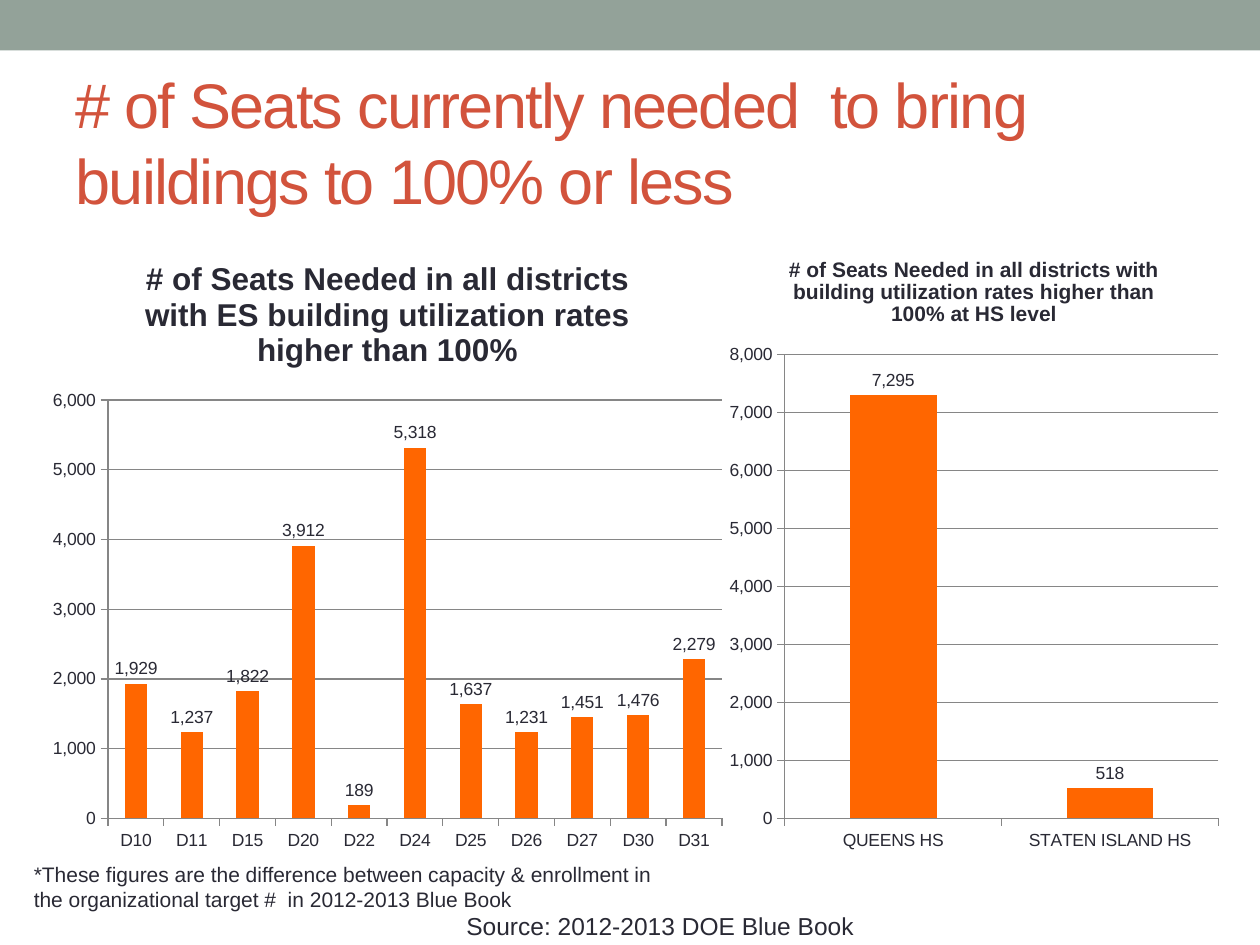
from pptx import Presentation
from pptx.chart.data import CategoryChartData
from pptx.dml.color import RGBColor
from pptx.enum.chart import XL_CHART_TYPE as ChartType, XL_LABEL_POSITION as LabelPos, XL_TICK_MARK as Tick
from pptx.enum.shapes import MSO_SHAPE as Shape
from pptx.enum.text import MSO_ANCHOR as Anchor, MSO_AUTO_SIZE as AutoSize, PP_ALIGN as Align
from pptx.util import Inches, Pt

FONT = "Arial"
INK, RUST, SAGE, ORANGE, GRAY = "292934", "D2533C", "93A299", "FF6600", "868686"
NUMBER = "#,##0"
CHART_TOP, CHART_HEIGHT = 1.85, 5
SEATS_ES = {"D10": 1929, "D11": 1237, "D15": 1822, "D20": 3912, "D22": 189, "D24": 5318,
            "D25": 1637, "D26": 1231, "D27": 1451, "D30": 1476, "D31": 2279}
SEATS_HS = {"QUEENS HS": 7295, "STATEN ISLAND HS": 518}


def color(value):
    """Turn a hex string into a colour."""
    return RGBColor.from_string(value)


def place(box, area):
    """Move a shape to an area given in inches."""
    box.left, box.top, box.width, box.height = map(Inches, area)


def style(font, size, ink=INK, bold=False):
    """Set face, size, colour and weight of a font."""
    font.name, font.size, font.bold = FONT, Pt(size), bold
    font.color.rgb = color(ink)


def write(frame, text, size, ink=INK, bold=False, align=Align.LEFT, anchor=Anchor.TOP,
          fit=AutoSize.SHAPE_TO_FIT_TEXT, spacing=None):
    """Write one formatted paragraph into a text frame."""
    frame.word_wrap, frame.auto_size, frame.vertical_anchor = True, fit, anchor
    para = frame.paragraphs[0]
    para.alignment = align
    span = para.add_run()
    span.text = text
    style(span.font, size, ink, bold)
    if spacing is not None:
        span.font._element.set("spc", str(int(spacing * 100)))


def add_banner(page, area):
    """Draw the plain band along the top edge."""
    band = page.shapes.add_shape(Shape.RECTANGLE, *map(Inches, area))
    band.shadow.inherit = False
    band.fill.solid()
    band.fill.fore_color.rgb = color(SAGE)
    band.line.fill.background()


def add_title(page, area, text):
    """Place and format the slide title."""
    title = page.shapes.title
    place(title, area)
    write(title.text_frame, text, 36, ink=RUST, anchor=Anchor.MIDDLE, fit=AutoSize.NONE, spacing=-1)


def add_note(page, area, text, size, **form):
    """Add a text box."""
    box = page.shapes.add_textbox(*map(Inches, area))
    write(box.text_frame, text, size, **form)


def add_seat_chart(page, area, heading, heading_size, seats):
    """Add a column chart of the seats needed."""
    data = CategoryChartData(number_format=NUMBER)
    data.categories = list(seats)
    data.add_series("Series 1", list(seats.values()))
    chart = page.shapes.add_chart(ChartType.COLUMN_CLUSTERED, *map(Inches, area), data).chart
    style(chart.font, 10)
    chart.has_legend = False
    chart.has_title = True
    title_frame = chart.chart_title.text_frame
    title_frame.text = heading
    style(title_frame.paragraphs[0].runs[0].font, heading_size, bold=True)
    chart.chart_title.include_in_layout = False

    for axis in (chart.category_axis, chart.value_axis):
        axis.major_tick_mark, axis.minor_tick_mark = Tick.OUTSIDE, Tick.NONE
        axis.format.line.color.rgb = color(GRAY)
        axis.format.line.width = Pt(0.75)
    values = chart.value_axis
    values.minimum_scale = 0
    values.major_unit = 1000
    values.maximum_scale = (max(seats.values()) // 1000 + 1) * 1000
    values.tick_labels.number_format = NUMBER
    values.tick_labels.number_format_is_linked = False
    values.has_major_gridlines = True
    values.major_gridlines.format.line.color.rgb = color(GRAY)
    values.major_gridlines.format.line.width = Pt(0.75)

    plot = chart.plots[0]
    plot.gap_width, plot.vary_by_categories, plot.has_data_labels = 150, False, True
    labels = plot.data_labels
    labels.show_value, labels.position = True, LabelPos.OUTSIDE_END
    labels.number_format, labels.number_format_is_linked = NUMBER, False
    style(labels.font, 10)
    bars = plot.series[0].format.fill
    bars.solid()
    bars.fore_color.rgb = color(ORANGE)


def main():
    """Build and save the slide."""
    deck = Presentation()
    deck.slide_width, deck.slide_height = Inches(10), Inches(7.5)
    page = deck.slides.add_slide(deck.slide_layouts[5])
    add_banner(page, (0, 0, 10, 0.4))
    add_title(page, (0.5, 0.58, 9, 1.08),
              "# of Seats currently needed  to bring buildings to 100% or less")
    add_seat_chart(page, (5.71, CHART_TOP, 4.04, CHART_HEIGHT),
                   "# of Seats Needed in all districts with building utilization rates "
                   "higher than 100% at HS level", 12, SEATS_HS)
    add_note(page, (0.17, 6.79, 5.36, 0.5),
             "*These figures are the difference between capacity & enrollment in "
             "the organizational target #  in 2012-2013 Blue Book", 12)
    add_seat_chart(page, (0.31, CHART_TOP, 5.53, CHART_HEIGHT),
                   "# of Seats Needed in all districts with ES building utilization rates "
                   "higher than 100%", 18, SEATS_ES)
    add_note(page, (0.5, 7.18, 9.48, 0.34), "Source: 2012-2013 DOE Blue Book", 14, align=Align.CENTER)
    deck.save("out.pptx")


if __name__ == "__main__":
    main()
